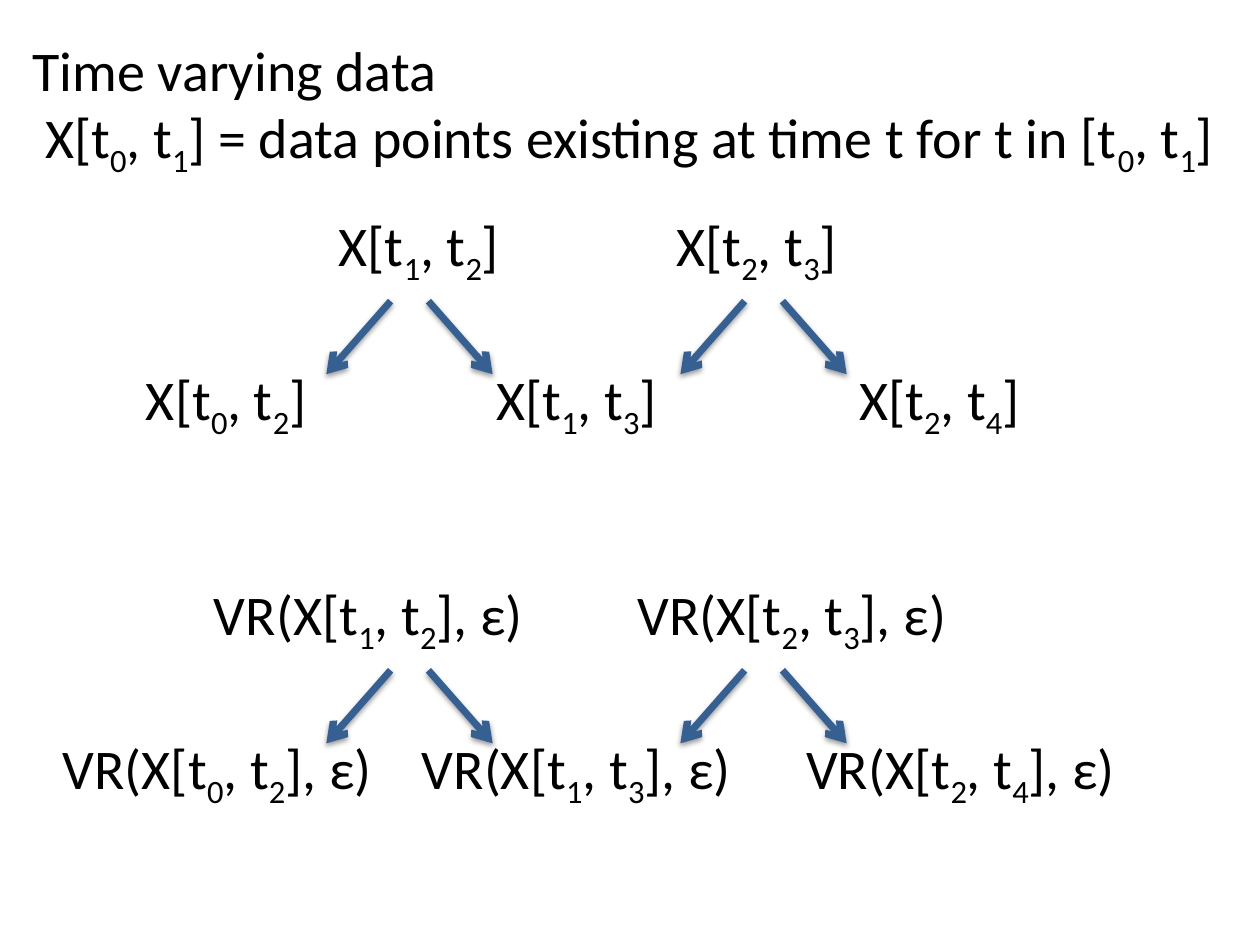
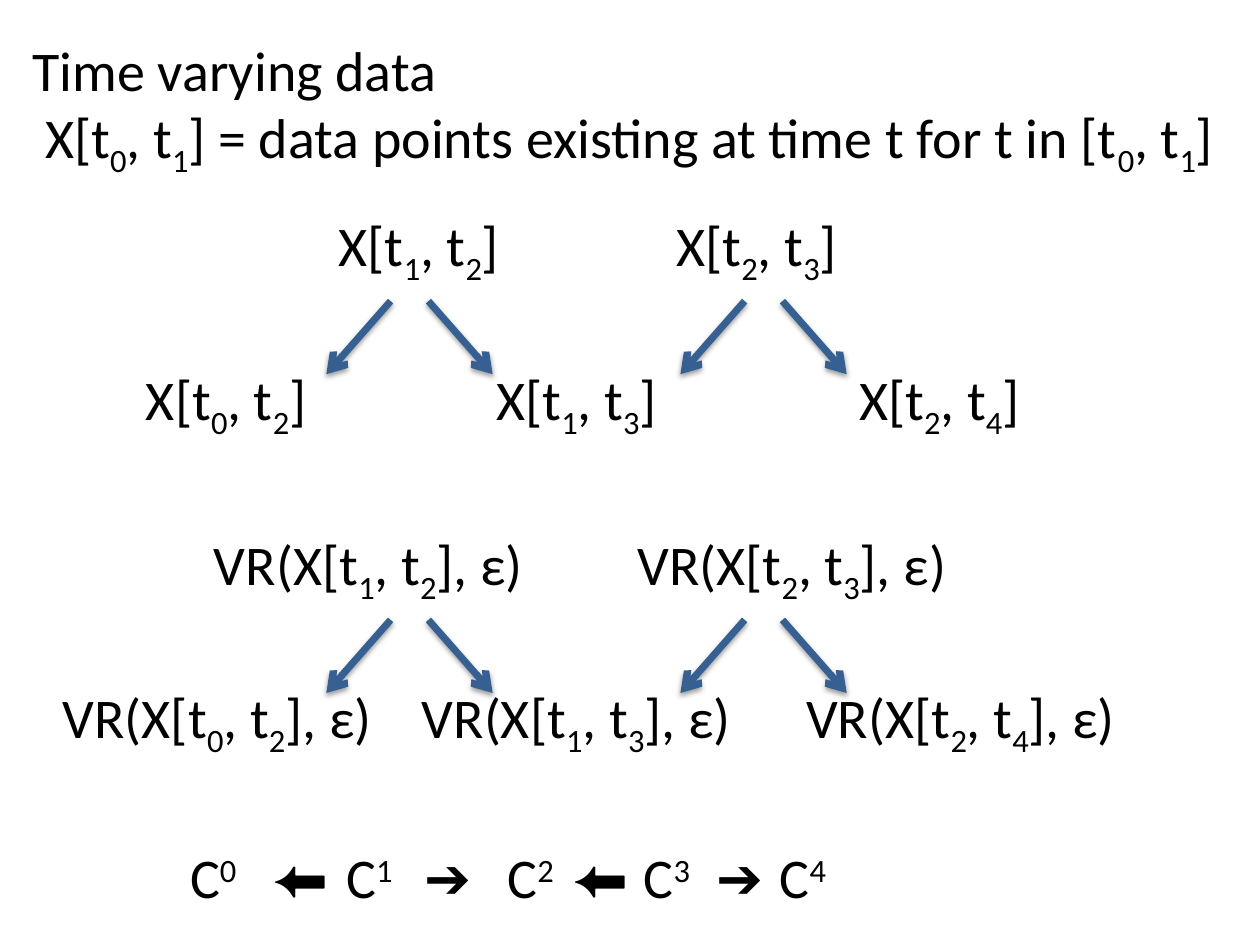
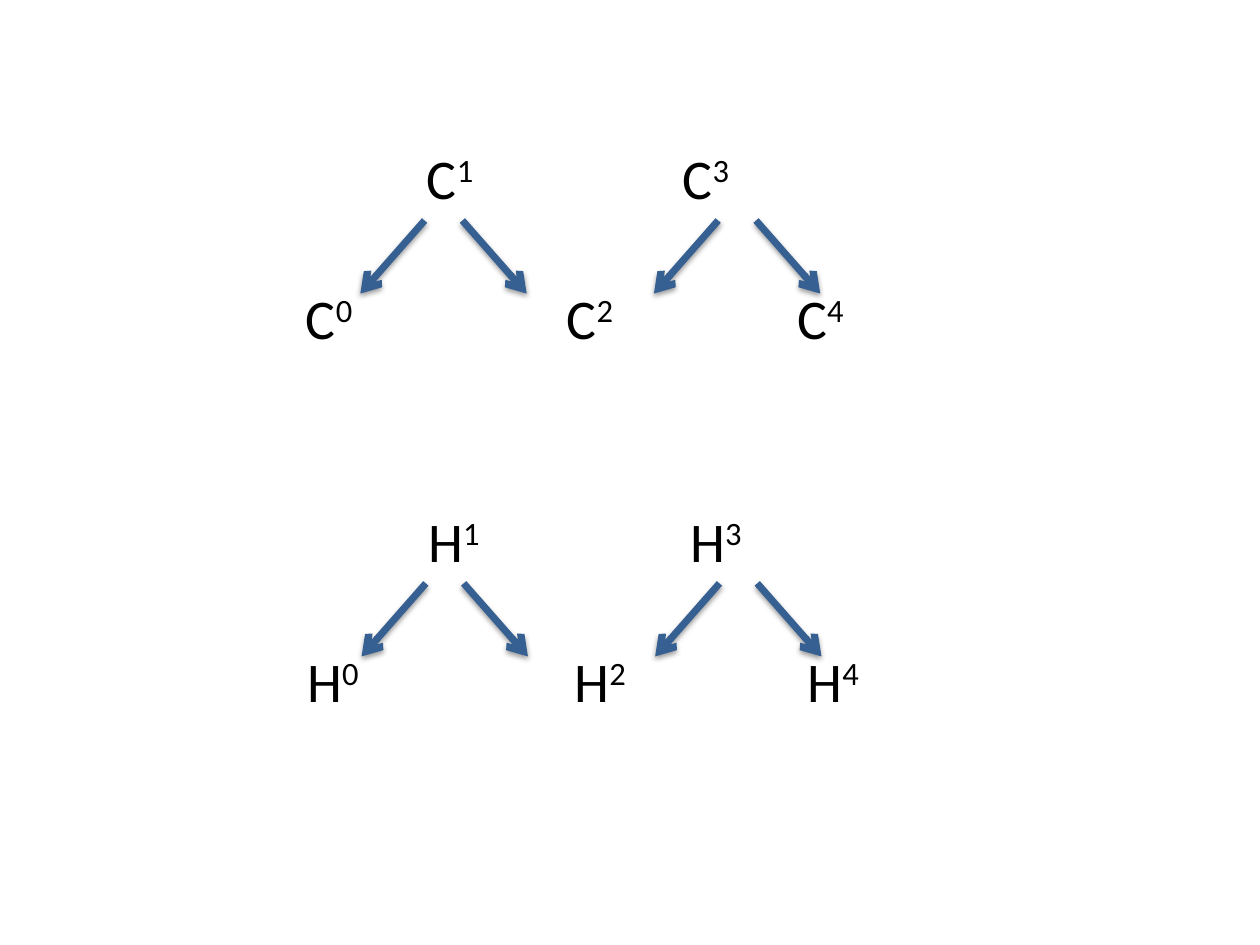
"""Build three slides of zigzag diagrams for time varying data."""
from dataclasses import dataclass
from itertools import groupby

from lxml import etree
from pptx import Presentation
from pptx.dml.color import RGBColor
from pptx.enum.shapes import MSO_CONNECTOR
from pptx.enum.text import MSO_AUTO_SIZE
from pptx.oxml import parse_xml
from pptx.oxml.ns import nsdecls, qn
from pptx.util import Inches, Pt

STRAIGHT = MSO_CONNECTOR.STRAIGHT
GROW = MSO_AUTO_SIZE.SHAPE_TO_FIT_TEXT
BASELINES = {"_": -25000, "^": 30000}
ARROW_SYMBOLS = "⬅➔"
ROW_HEIGHT = 0.64
ARROW_RUN, ARROW_FALL = 0.51, 0.58
ARROW_HALF_GAP = 0.15
ARROW_LIFT = 0.45
SHADOW = (
    f'<a:effectLst {nsdecls("a")}>'
    '<a:outerShdw blurRad="39370" dist="20320" dir="5400000" rotWithShape="0">'
    '<a:srgbClr val="000000"><a:alpha val="38000"/></a:srgbClr>'
    '</a:outerShdw></a:effectLst>'
)


@dataclass(frozen=True)
class Theme:
    """Colours, fonts and sizes shared by the slides."""

    ink: RGBColor = RGBColor(0x00, 0x00, 0x00)
    arrow: RGBColor = RGBColor(0x37, 0x60, 0x92)
    font: str = "Calibri"
    symbol_font: str = "Arial"
    size: int = 32
    arrow_width: int = 4


@dataclass(frozen=True)
class Zigzag:
    """Labels of two rows and their places relative to the diagram's left."""

    upper: tuple
    lower: tuple
    upper_left: float
    upper_width: float
    lower_width: float
    upper_stops: tuple
    lower_stops: tuple
    peaks: tuple
    drop: float


THEME = Theme()
HEADING = (
    "Time varying data",
    " X[t_0, t_1] = data points existing at time t for t in [t_0, t_1]",
)
CHAIN = ("C^0", "⬅", "C^1", "➔", "C^2", "⬅", "C^3", "➔", "C^4")
CHAIN_STOPS = (0.65, 1.24, 1.86, 2.52, 3.03, 3.6, 4.18, 4.68)
UPPER_SPANS = ("X[t_1, t_2]", "X[t_2, t_3]")
LOWER_SPANS = ("X[t_0, t_2]", "X[t_1, t_3]", "X[t_2, t_4]")


def rips(spans):
    """Wrap each data span in its VR complex."""
    return tuple(f"VR({span}, ε)" for span in spans)


def powers(letter, indices):
    """Give the letter each index as a superscript."""
    return tuple(f"{letter}^{index}" for index in indices)


def graded(letter, upper_stops, lower_stops, lower_width):
    """Describe the zigzag of a letter with indices 0 to 4."""
    return Zigzag(powers(letter, (1, 3)), powers(letter, (0, 2, 4)), 0.96, 4.46,
                  lower_width, upper_stops, lower_stops, (1.19, 3.52), 1.11)


DATA = Zigzag(UPPER_SPANS, LOWER_SPANS, 1.53, 4.46, 7.32,
              (2.68,), (2.78, 5.66), (2.19, 5.0), 1.22)
COMPLEXES = Zigzag(rips(UPPER_SPANS), rips(LOWER_SPANS), 1.2, 6.97, 8.76,
                   (3.36,), (2.85, 5.9), (2.85, 5.66), 1.22)
CHAINS = graded("C", (2.03,), (2.07, 3.9), 4.86)
HOMOLOGY = graded("H", (2.08,), (2.12, 3.97), 4.91)


def styled_characters(text):
    """List characters with the baseline and font that the marks ask for."""
    styled, mark = [], ""
    for character in text:
        if character in BASELINES:
            mark = character
            continue
        font = THEME.symbol_font if character in ARROW_SYMBOLS else THEME.font
        styled.append((character, (BASELINES.get(mark, 0), font)))
        mark = ""
    return styled


def add_text(shapes, text, *, left, top, width, height=ROW_HEIGHT, stops=()):
    """Add lines of text, with _ and ^ marking lowered and raised characters."""
    box = shapes.add_textbox(Inches(left), Inches(top), Inches(width), Inches(height))
    frame = box.text_frame
    frame.word_wrap = True
    frame.auto_size = GROW
    for index, line in enumerate(text.split("\n")):
        paragraph = frame.add_paragraph() if index else frame.paragraphs[0]
        if stops:
            tabs = etree.SubElement(paragraph._p.get_or_add_pPr(), qn("a:tabLst"))
            for stop in stops:
                etree.SubElement(tabs, qn("a:tab"), pos=str(Inches(stop)), algn="l")
        for (baseline, font), piece in groupby(styled_characters(line), lambda item: item[1]):
            run = paragraph.add_run()
            run.text = "".join(character for character, _ in piece)
            run.font.name = font
            run.font.size = Pt(THEME.size)
            run.font.color.rgb = THEME.ink
            if baseline:
                run._r.get_or_add_rPr().set("baseline", str(baseline))


def add_arrow(shapes, x, y, direction):
    """Add a shadowed arrow that falls to the left (-1) or right (1)."""
    arrow = shapes.add_connector(
        STRAIGHT, Inches(x), Inches(y),
        Inches(x + direction * ARROW_RUN), Inches(y + ARROW_FALL))
    arrow.line.color.rgb = THEME.arrow
    arrow.line.width = Pt(THEME.arrow_width)
    properties = arrow._element.spPr
    etree.SubElement(properties.find(qn("a:ln")), qn("a:tailEnd"), type="arrow")
    properties.append(parse_xml(SHADOW))


def add_zigzag(slide, zigzag, left, top):
    """Group two rows of labels with a pair of arrows under each peak."""
    shapes = slide.shapes.add_group_shape().shapes
    add_text(shapes, "\t".join(zigzag.upper), left=left + zigzag.upper_left, top=top,
             width=zigzag.upper_width, stops=zigzag.upper_stops)
    add_text(shapes, "\t".join(zigzag.lower), left=left, top=top + zigzag.drop,
             width=zigzag.lower_width, stops=zigzag.lower_stops)
    for peak in zigzag.peaks:
        for direction in (-1, 1):
            add_arrow(shapes, left + peak + direction * ARROW_HALF_GAP,
                      top + zigzag.drop - ARROW_LIFT, direction)


def add_blank(deck):
    """Add a slide on the blank layout."""
    return deck.slides.add_slide(deck.slide_layouts[6])


def add_data_slide(deck, complexes_top):
    """Add the heading, the data zigzag and the zigzag of complexes."""
    slide = add_blank(deck)
    add_text(slide.shapes, "\n".join(HEADING), left=0.16, top=0.23, width=9.84, height=1.18)
    add_zigzag(slide, DATA, 1.06, 1.62)
    add_zigzag(slide, COMPLEXES, 0.4, complexes_top)
    return slide


def add_chain(slide, left, top):
    """Add the row of chain groups joined by arrow symbols."""
    add_text(slide.shapes, "\t".join(CHAIN), left=left, top=top, width=6.39, stops=CHAIN_STOPS)


def add_homology_slide(deck):
    """Add the zigzags of chain groups and of homology groups."""
    slide = add_blank(deck)
    add_zigzag(slide, CHAINS, 2.33, 1.09)
    add_zigzag(slide, HOMOLOGY, 2.34, 3.97)


def main():
    """Build and save the presentation."""
    deck = Presentation()
    deck.slide_width, deck.slide_height = Inches(10), Inches(7.5)
    add_data_slide(deck, 4.55)
    add_chain(add_data_slide(deck, 4.15), 1.41, 6.64)
    add_homology_slide(deck)
    deck.save("out.pptx")


if __name__ == "__main__":
    main()
